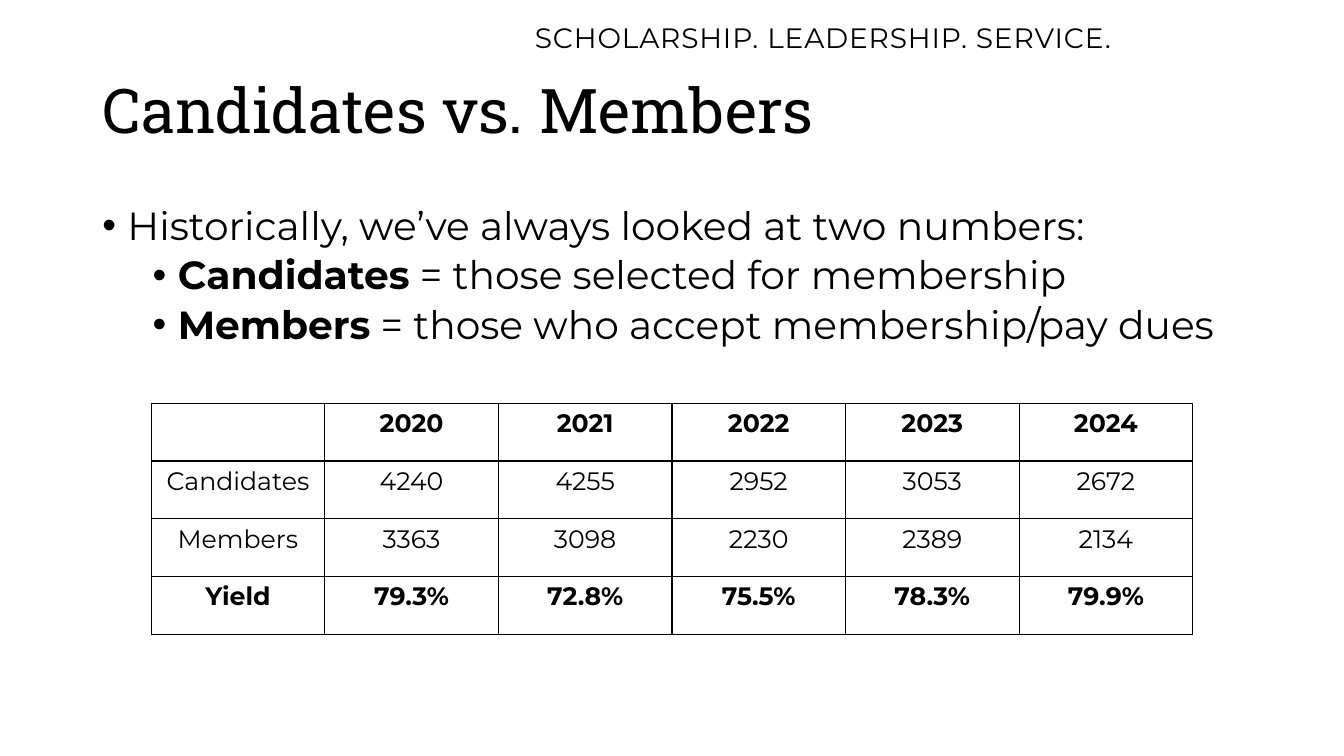
from lxml import etree
from pptx import Presentation
from pptx import util as u
from pptx.dml.color import RGBColor
from pptx.enum import text
from pptx.oxml import ns

BLACK = RGBColor(0, 0, 0)
WHITE = RGBColor(255, 255, 255)
SANS, SERIF = "Montserrat", "Roboto Slab"

# Grid: 160 columns by 90 rows of square units
UNIT = u.Inches(1) / 12
COLS, ROWS = 160, 90

POINTS = [
    (0, "", "Historically, we’ve always looked at two numbers:"),
    (1, "Candidates", " = those selected for membership"),
    (1, "Members", " = those who accept membership/pay dues"),
]
YIELDS = [
    ["", "2020", "2021", "2022", "2023", "2024"],
    ["Candidates", "4240", "4255", "2952", "3053", "2672"],
    ["Members", "3363", "3098", "2230", "2389", "2134"],
    ["Yield", "79.3%", "72.8%", "75.5%", "78.3%", "79.9%"],
]
BOLD_ROWS = (0, 3)


def grid(*spans):
    return [u.Emu(round(span * UNIT)) for span in spans]


def style(item, form):
    for name, value in form.items():
        setattr(item, name, value)


def add_run(para, words, face, size, bold=False):
    run = para.add_run()
    run.text = words
    style(run.font, {"name": face, "size": u.Pt(size), "bold": bold})
    run.font.color.rgb = BLACK
    return run


def add_box(slide, *spans):
    frame = slide.shapes.add_textbox(*grid(*spans)).text_frame
    frame.word_wrap = True
    return frame


def add_tag(slide, words):
    frame = add_box(slide, 62.5, 1.8, 73.3, 5.3)
    run = add_run(frame.paragraphs[0], words, SANS, 20)
    run.font._element.set("spc", "60")


def set_title(slide, words):
    title = slide.shapes.title
    spots = ("left", "top", "width", "height")
    style(title, dict(zip(spots, grid(11, 4.8, 138, 17.4))))
    frame = title.text_frame
    style(frame, {"vertical_anchor": text.MSO_ANCHOR.MIDDLE,
                  "auto_size": text.MSO_AUTO_SIZE.NONE})
    para = frame.paragraphs[0]
    style(para, {"alignment": text.PP_ALIGN.LEFT, "line_spacing": 0.9})
    add_run(para, words, SERIF, 44)


def add_list(slide, points):
    frame = add_box(slide, 11, 24, 138, 57)
    for i, (level, term, words) in enumerate(points):
        para = frame.add_paragraph() if i else frame.paragraphs[0]
        # Hanging bullet, half an inch deeper per level
        props = para._p.get_or_add_pPr()
        props.set("marL", str(u.Inches(0.25 + 0.5 * level)))
        props.set("indent", str(u.Inches(-0.25)))
        etree.SubElement(props, ns.qn("a:buFont"), typeface="Arial")
        etree.SubElement(props, ns.qn("a:buChar"), char="•")
        style(para, {"level": level, "line_spacing": 0.9,
                     "space_before": u.Pt(5 if i else 0)})
        if term:
            add_run(para, term, SANS, 28, True)
        add_run(para, words, SANS, 28)


def add_edges(cell):
    props = cell._tc.get_or_add_tcPr()
    for side in "LRTB":
        line = etree.SubElement(props, ns.qn(f"a:ln{side}"), w=str(u.Pt(1)))
        fill = etree.SubElement(line, ns.qn("a:solidFill"))
        etree.SubElement(fill, ns.qn("a:srgbClr"), val=str(BLACK))


def add_grid(slide, rows):
    place = grid(18, 48, 124, 27.5)
    table = slide.shapes.add_table(len(rows), len(rows[0]), *place).table
    style(table, {"first_row": False, "horz_banding": False})
    for r, row in enumerate(rows):
        for c, words in enumerate(row):
            cell = table.cell(r, c)
            add_edges(cell)
            cell.fill.solid()
            cell.fill.fore_color.rgb = WHITE
            para = cell.text_frame.paragraphs[0]
            para.alignment = text.PP_ALIGN.CENTER
            if words:
                add_run(para, words, SANS, 18, r in BOLD_ROWS)


def main():
    deck = Presentation()
    deck.slide_width, deck.slide_height = grid(COLS, ROWS)
    slide = deck.slides.add_slide(deck.slide_layouts.get_by_name("Title Only"))

    # Heading
    add_tag(slide, "SCHOLARSHIP. LEADERSHIP. SERVICE.")
    set_title(slide, "Candidates vs. Members")

    # Definitions and yearly figures
    add_list(slide, POINTS)
    add_grid(slide, YIELDS)
    deck.save("out.pptx")


if __name__ == "__main__":
    main()
